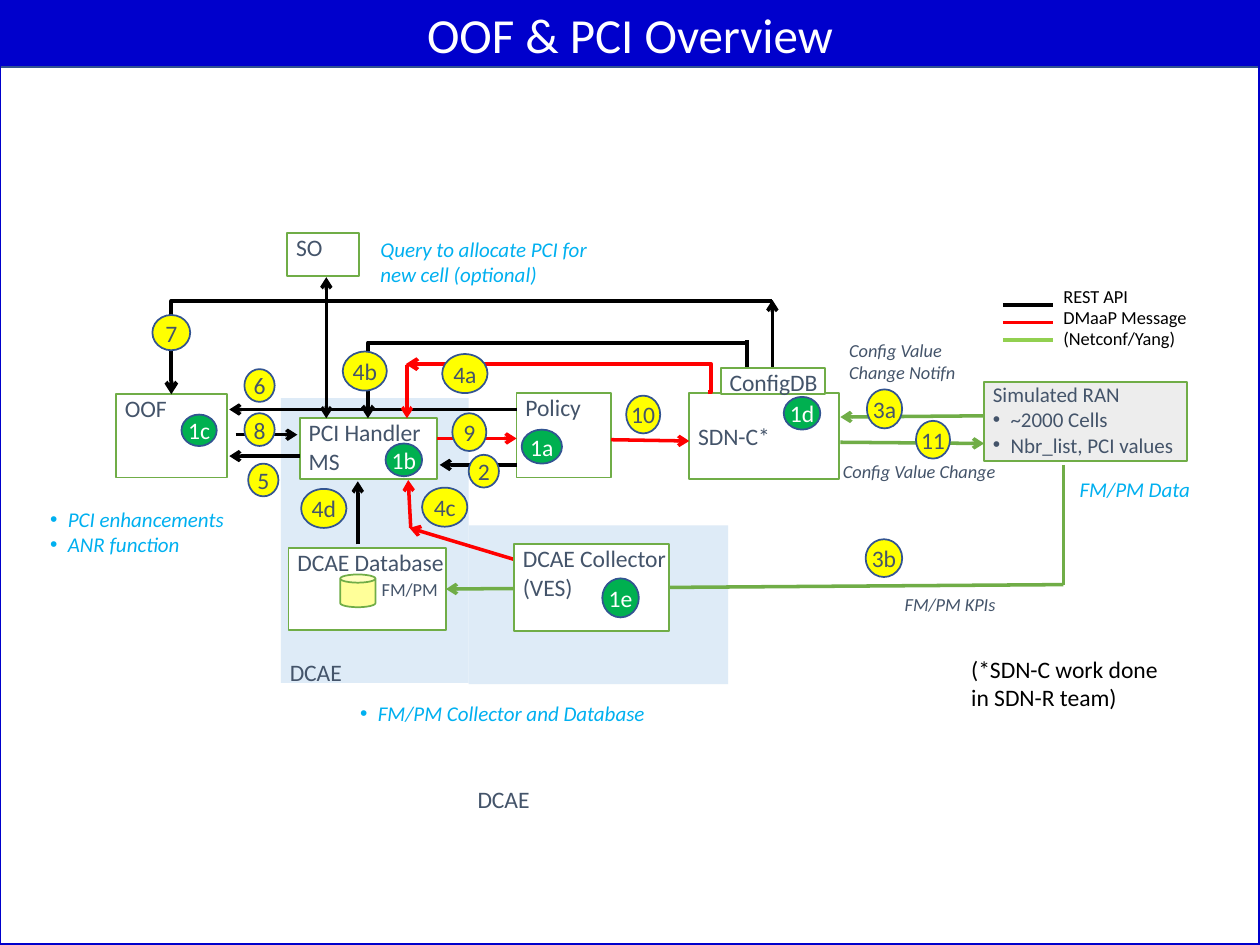
from lxml.etree import SubElement
from pptx import Presentation
from pptx.dml.color import RGBColor as RGB
from pptx.enum.shapes import MSO_CONNECTOR as Link, MSO_SHAPE as Shape
from pptx.enum.text import MSO_ANCHOR as Anchor, PP_ALIGN as Align
from pptx.oxml.ns import qn
from pptx.util import Inches, Pt

THEME = {
    "font": "Calibri",
    "title": 28, "body": 13.5, "note": 12, "small": 10.5,
    "blue": "0000CC", "outline": "325491", "panel": "DEEBF7", "green": "70AD47",
    "slate": "44546A", "cyan": "00B0F0", "white": "FFFFFF", "gray": "EDEDED",
    "black": "000000", "red": "FF0000", "lime": "92D050", "yellow": "FFFF00",
    "emerald": "00B050", "cream": "FFFF99",
}

TITLE = "OOF & PCI Overview"
PANELS = [(3.72, 4.17, 2.06, 1.26), (2.23, 3.16, 1.49, 2.26)]

BACK_BOXES = {
    "handler": ("PCI Handler MS", (2.38, 3.32, 1.09, 0.48), {}),
    "oof": ("OOF", (0.92, 3.13, 0.88, 0.66), {}),
    "sdnc": ("SDN-C*", (5.47, 3.12, 1.19, 0.68), {"margin_top": Inches(0.23)}),
    "policy": ("Policy", (4.1, 3.12, 0.75, 0.67), {}),
    "so": ("SO", (2.28, 1.85, 0.57, 0.34), {}),
    "database": ("DCAE Database", (2.29, 4.35, 1.25, 0.65), {}),
}
FRONT_BOXES = {
    "configdb": ("ConfigDB", (5.72, 2.92, 0.83, 0.21), {}),
    "collector": ("DCAE Collector\n(VES)", (4.08, 4.32, 1.23, 0.69), {}),
}
RAN = ("Simulated RAN\n• ~2000 Cells\n• Nbr_list, PCI values", (7.81, 3.03, 1.61, 0.63))

ARROWS = [
    ((4.85, 3.49), (5.47, 3.5), "red", "tail"),
    ((4.1, 3.69), (3.49, 3.69), "black", "tail"),
    ((3.47, 3.48), (4.1, 3.48), "red", "tail"),
    ((1.87, 3.45), (2.36, 3.45), "black", "tail"),
    ((2.38, 3.62), (1.82, 3.62), "black", "tail"),
    ((5.93, 3.1), (5.93, 2.7), "black", ""),
    ((4.1, 3.25), (1.82, 3.25), "black", "tail"),
    ((6.13, 3.12), (6.13, 2.38), "black", "tail"),
    ((7.81, 3.3), (6.67, 3.31), "green", "tail"),
    ((6.67, 3.51), (7.81, 3.52), "green", "tail"),
    ((3.26, 4.19), (3.24, 3.81), "red", "tail"),
    ((4.08, 4.44), (3.25, 4.19), "red", "tail"),
    ((3.23, 2.9), (3.23, 3.32), "red", "tail"),
    ((2.84, 4.32), (2.84, 3.82), "black", "tail"),
    ((2.59, 2.2), (2.59, 3.32), "black", "head tail"),
    ((8.44, 3.69), (8.44, 4.64), "green", ""),
]
KPI_FLOW = ((8.44, 4.64), (3.54, 4.67), "green", "tail")
CORNERS = [((5.92, 2.72), (2.92, 3.32)), ((6.13, 2.39), (1.36, 3.13))]
DETOUR = ((3.22, 2.89), (5.62, 3.11), "red", "head")
DETOUR_BEND = 101100

STEPS = [
    ("2", 3.72, 3.61, 0.24, 0.26), ("5", 1.97, 3.68, 0.24, 0.26),
    ("6", 1.94, 2.93, 0.24, 0.26), ("8", 1.94, 3.28, 0.24, 0.26),
    ("9", 3.59, 3.28, 0.27, 0.3), ("10", 4.97, 3.14, 0.27, 0.3),
    ("11", 7.27, 3.34, 0.27, 0.3), ("7", 1.21, 2.5, 0.3, 0.28),
    ("3a", 6.88, 3.09, 0.28, 0.31), ("3b", 6.87, 4.28, 0.29, 0.3),
    ("4a", 3.51, 2.81, 0.36, 0.31), ("4b", 2.72, 2.79, 0.35, 0.31),
    ("4c", 3.35, 3.87, 0.36, 0.31), ("4d", 2.39, 3.88, 0.36, 0.31),
]
OWNERS = [
    ("1a", 4.14, 3.41, 0.32, 0.27), ("1b", 3.06, 3.52, 0.29, 0.26),
    ("1c", 1.44, 3.29, 0.28, 0.25), ("1d", 6.22, 3.15, 0.29, 0.26),
    ("1e", 4.78, 4.59, 0.29, 0.31),
]

LEGEND = [("REST API", "black"), ("DMaaP Message", "red"), ("(Netconf/Yang)", "lime")]
TIGHT_LABELS = [
    ("Config Value\nChange Notifn", (6.74, 2.69, 1, 0.36), "small", True),
    ("Config Value Change", (6.69, 3.65, 1.3, 0.23), "small", True),
    ("FM/PM KPIs", (7.18, 4.71, 0.85, 0.26), "small", True),
    ("FM/PM", (3.03, 4.59, 0.5, 0.23), "small", False),
    ("DCAE", (3.79, 6.23, 0.6, 0.23), "body", False),
    ("DCAE", (2.3, 5.22, 0.6, 0.23), "body", False),
]
NOTES = [
    ("• PCI enhancements\n• ANR function", (0.3, 3.97, 1.68, 0.5)),
    ("• FM/PM Collector and Database", (2.76, 5.51, 2.55, 0.3)),
    ("FM/PM Data", (8.47, 3.73, 1.25, 0.3)),
    ("Query to allocate PCI for new cell (optional)", (2.92, 1.83, 1.92, 0.5)),
]
FOOTNOTE = ("(*SDN-C work done\nin SDN-R team)", (7.61, 5.15, 1.8, 0.56))

FLUSH = {f"margin_{side}": 0 for side in ("left", "top", "right", "bottom")}
INSET = {**FLUSH, "margin_left": Inches(0.07)}


def color(name):
    return RGB.from_string(THEME[name])


def apply(target, values):
    for attribute, value in values.items():
        setattr(target, attribute, value)


def write(holder, text, size="body", ink="slate", italic=False, align=Align.LEFT, **frame_format):
    frame = holder.text_frame
    apply(frame, {"word_wrap": True, "vertical_anchor": Anchor.TOP, **frame_format})
    for index, line in enumerate(text.split("\n")):
        paragraph = frame.paragraphs[0] if index == 0 else frame.add_paragraph()
        paragraph.alignment = align
        if line.startswith("• "):
            properties = paragraph._p.get_or_add_pPr()
            properties.set("marL", str(Inches(0.14)))
            properties.set("indent", str(-Inches(0.14)))
            SubElement(properties, qn("a:buFont"), typeface="Arial")
            SubElement(properties, qn("a:buChar"), char="•")
        run = paragraph.add_run()
        run.text = line.removeprefix("• ")
        apply(run.font, {"name": THEME["font"], "size": Pt(THEME[size]), "italic": italic})
        run.font.color.rgb = color(ink)


def paint(shape, fill=None, line=None, width=1):
    for part, ink in ((shape.fill, fill), (shape.line.fill, line)):
        if ink:
            part.solid()
            part.fore_color.rgb = color(ink)
        else:
            part.background()
    if line:
        shape.line.width = Pt(width)


def add_shape(slide, kind, place, **look):
    shape = slide.shapes.add_shape(kind, *map(Inches, place))
    shape.shadow.inherit = False
    paint(shape, **look)
    return shape


def add_label(slide, text, place, **text_format):
    write(slide.shapes.add_textbox(*map(Inches, place)), text, **text_format)


def add_boxes(slide, boxes):
    added = {}
    for name, (text, place, frame_format) in boxes.items():
        added[name] = add_shape(slide, Shape.RECTANGLE, place, fill="white", line="green")
        write(added[name], text, **{**INSET, **frame_format})
    return added


def add_line(slide, start, end, ink, arrows="", kind=Link.STRAIGHT, width=2):
    line = slide.shapes.add_connector(kind, *map(Inches, start + end))
    line.line.color.rgb = color(ink)
    line.line.width = Pt(width)
    outline = line.line._get_or_add_ln()
    for tip in arrows.split():
        SubElement(outline, qn(f"a:{tip}End"), type="arrow")
    SubElement(line._element.spPr, qn("a:effectLst"))
    return line


def add_corner(slide, start, end):
    corner = add_line(slide, end, start, "black", "tail", Link.ELBOW, 2.25)
    properties = corner._element.spPr
    properties.find(qn("a:xfrm")).set("rot", str(180 * 60000))
    properties.find(qn("a:prstGeom")).set("prst", "bentConnector2")


def main():
    deck = Presentation()
    apply(deck, {"slide_width": Inches(10), "slide_height": Inches(7.5)})
    slide = deck.slides.add_slide(deck.slide_layouts[5])

    title = slide.shapes.title
    apply(title, dict(zip(("left", "top", "width", "height"), map(Inches, (0, 0.01, 10, 0.52)))))
    paint(title, "blue", "outline")
    write(title, TITLE, "title", "white", align=Align.CENTER,
          **{**FLUSH, "vertical_anchor": Anchor.MIDDLE})
    add_shape(slide, Shape.RECTANGLE, (-0.01, 0.01, 10.01, 7.49), line="blue", width=2.25)

    for place in PANELS:
        add_shape(slide, Shape.RECTANGLE, place, fill="panel")
    boxes = add_boxes(slide, BACK_BOXES)
    ran_text, ran_place = RAN
    ran = add_shape(slide, Shape.RECTANGLE, ran_place, fill="gray", line="green")
    write(ran, ran_text, "note", **INSET)

    for arrow in ARROWS:
        add_line(slide, *arrow)
    add_line(slide, *KPI_FLOW).end_connect(boxes["database"], 3)
    for corner in CORNERS:
        add_corner(slide, *corner)
    detour = add_line(slide, *DETOUR, Link.ELBOW, 2.25)
    guides = detour._element.spPr.find(qn("a:prstGeom")).get_or_add_avLst()
    SubElement(guides, qn("a:gd"), name="adj1", fmla=f"val {DETOUR_BEND}")

    add_boxes(slide, FRONT_BOXES)
    add_shape(slide, Shape.CAN, (2.7, 4.56, 0.28, 0.26), fill="cream", line="green")
    for badges, fill, ink in ((STEPS, "yellow", "slate"), (OWNERS, "emerald", "white")):
        for text, *place in badges:
            badge = add_shape(slide, Shape.OVAL, place, fill=fill, line="outline")
            write(badge, text, ink=ink, align=Align.CENTER,
                  **{**FLUSH, "word_wrap": False, "vertical_anchor": Anchor.MIDDLE})

    for row, (text, ink) in enumerate(LEGEND):
        swatch_y = 2.42 + 0.14 * row
        add_line(slide, (7.96, swatch_y), (8.36, swatch_y), ink)
        add_label(slide, text, (8.44, 2.26 + 0.17 * row, 1.2, 0.23),
                  size="small", ink="black", **FLUSH)
    for text, place, size, italic in TIGHT_LABELS:
        add_label(slide, text, place, size=size, italic=italic, **FLUSH)
    for text, place in NOTES:
        add_label(slide, text, place, size="note", ink="cyan", italic=True)
    add_label(slide, *FOOTNOTE, ink="black")

    deck.save("out.pptx")


if __name__ == "__main__":
    main()
